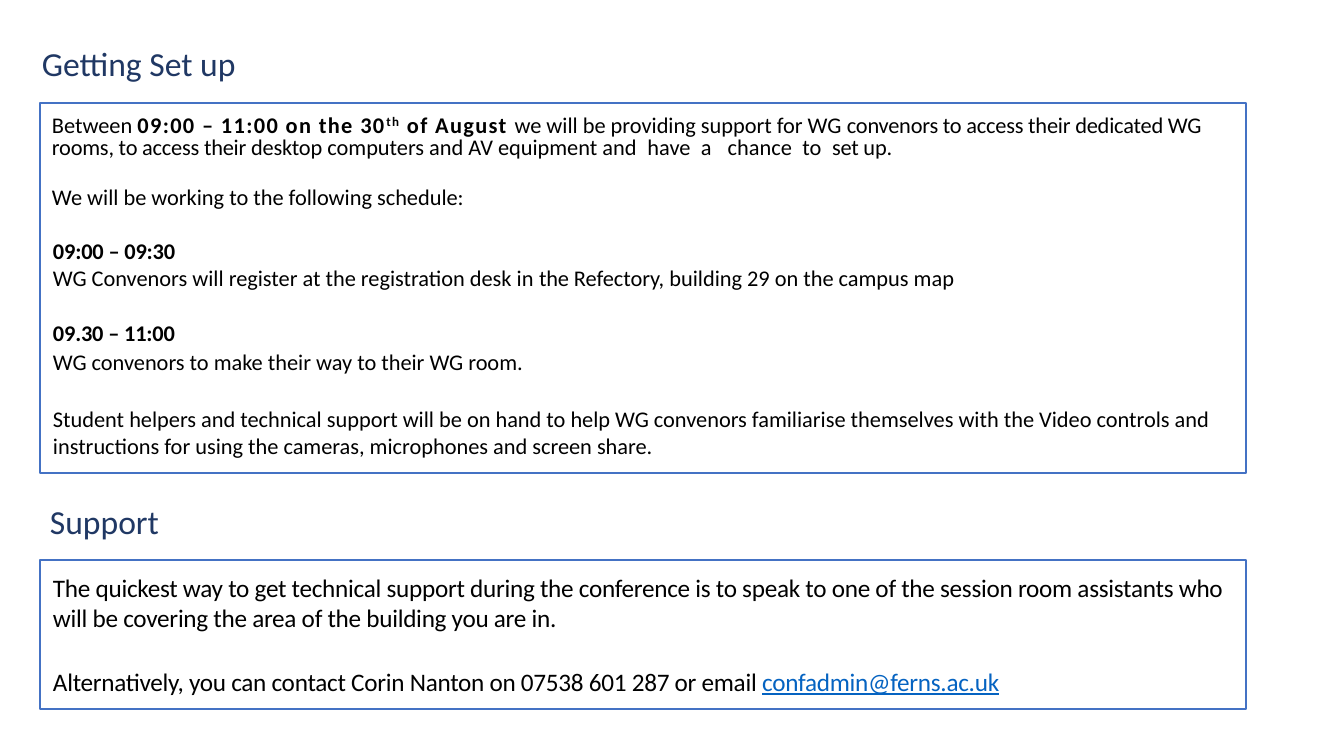
from pptx import Presentation
from pptx.dml.color import RGBColor
from pptx.enum.shapes import MSO_SHAPE
from pptx.enum.text import MSO_ANCHOR, PP_ALIGN
from pptx.util import Emu, Pt

# Content: a span is (text, style); a paragraph is (space before, line spacing, indent px, spans)
COLORS = {"heading": "203864", "border": "4472C4", "text": "000000", "email": "0563C1"}
BOLD = {"bold": True, "spacing": -10}
DATE = {"bold": True, "spacing": 100}
TIGHT = {"spacing": -15}
WIDE = {"spacing": 390}
EMAIL = {"spacing": -20, "underline": True, "color": "email"}

SETUP = [
    (0, 16.1, 0, [
        ("Between ", {}),
        ("09:00 – 11:00 on the 30", DATE),
        ("th", {**DATE, "baseline": 30000}),
        (" of August ", DATE),
        ("we will be providing support for WG ", {}),
        ("convenors to access their dedicated WG rooms, to access their desktop ", TIGHT),
        ("computers and AV equipment and", {}), (" ", WIDE),
        ("have", {}), (" a ", WIDE),
        ("chance", {}), (" ", WIDE),
        ("to", {}), (" ", WIDE),
        ("set up.", TIGHT)]),
    (17.7, 17.7, 0, [("We will be working to the following schedule:", {})]),
    (19.7, None, 1, [("09:00 – 09:30", BOLD)]),
    (0, None, 1, [
        ("WG Convenors will register at the registration desk in ", {}),
        ("the ", TIGHT),
        ("Refectory, building 29 on the campus map", {})]),
    (20.5, None, 1, [("09.30 – 11:00", BOLD)]),
    (1, None, 1, [("WG convenors to make their way to their WG room.", {})]),
    (21.5, None, 1, [
        ("Student helpers and technical support will be on hand to help WG convenors "
         "familiarise themselves with the Video controls and instructions for using the "
         "cameras, microphones and screen share.", {})]),
]
SUPPORT = [
    (1, None, 1, [
        ("The quickest way to get technical support during the conference is to speak to "
         "one of the session room assistants who will be covering the area of the building "
         "you are in.", {"spacing": -20})]),
    (24, None, 1, [
        ("Alternatively, you can contact Corin Nanton on 07538 601 287 or email ",
         {"spacing": -20}),
        ("confadmin@ferns.ac.uk", EMAIL)]),
]

# Places in px: left, top, width, height
HEADINGS = [("Getting Set up", (32, 38, 618, 40)), ("Support", (40, 496, 710, 50))]
PANELS = [(SETUP, 16, (40, 103, 1206, 370)), (SUPPORT, 18, (40, 560, 1206, 149))]
PANEL_INSET = 12
FONT = "Calibri"


def px(length):
    return Emu(round(length * 914400 / 100.8))


def color(name):
    return RGBColor.from_string(COLORS[name])


def style_paragraph(paragraph, size, color_name):
    paragraph.alignment = PP_ALIGN.LEFT
    paragraph.font.name = FONT
    paragraph.font.size = Pt(size)
    paragraph.font.color.rgb = color(color_name)


def add_span(paragraph, text, style):
    span = paragraph.add_run()
    span.text = text
    span.font.bold = style.get("bold")
    span.font.underline = style.get("underline")
    if "color" in style:
        span.font.color.rgb = color(style["color"])
    properties = span.font._element
    properties.set("spc", str(style.get("spacing", 0)))
    if "baseline" in style:
        properties.set("baseline", str(style["baseline"]))


def add_heading(page, text, place):
    box = page.shapes.add_textbox(*map(px, place))
    box.text_frame.word_wrap = True
    paragraph = box.text_frame.paragraphs[0]
    paragraph.text = text
    style_paragraph(paragraph, 24, "heading")


def add_panel(page, paragraphs, size, place):
    box = page.shapes.add_shape(MSO_SHAPE.RECTANGLE, *map(px, place))
    box.shadow.inherit = False
    box.fill.background()
    box.line.color.rgb = color("border")
    box.line.width = Pt(1)
    frame = box.text_frame
    frame.word_wrap = True
    frame.vertical_anchor = MSO_ANCHOR.TOP
    frame.margin_left = frame.margin_right = px(PANEL_INSET)
    frame.margin_top = frame.margin_bottom = px(PANEL_INSET)
    for index, (before, line_spacing, indent, spans) in enumerate(paragraphs):
        paragraph = frame.add_paragraph() if index else frame.paragraphs[0]
        style_paragraph(paragraph, size, "text")
        paragraph.space_before = Pt(before)
        if line_spacing:
            paragraph.line_spacing = Pt(line_spacing)
        paragraph._p.get_or_add_pPr().set("marL", str(px(indent)))
        for text, style in spans:
            add_span(paragraph, text, style)


def main():
    deck = Presentation()
    deck.slide_width, deck.slide_height = px(1344), px(756)
    page = deck.slides.add_slide(deck.slide_layouts[6])
    for text, place in HEADINGS:
        add_heading(page, text, place)
    for paragraphs, size, place in PANELS:
        add_panel(page, paragraphs, size, place)
    deck.save("out.pptx")


if __name__ == "__main__":
    main()
